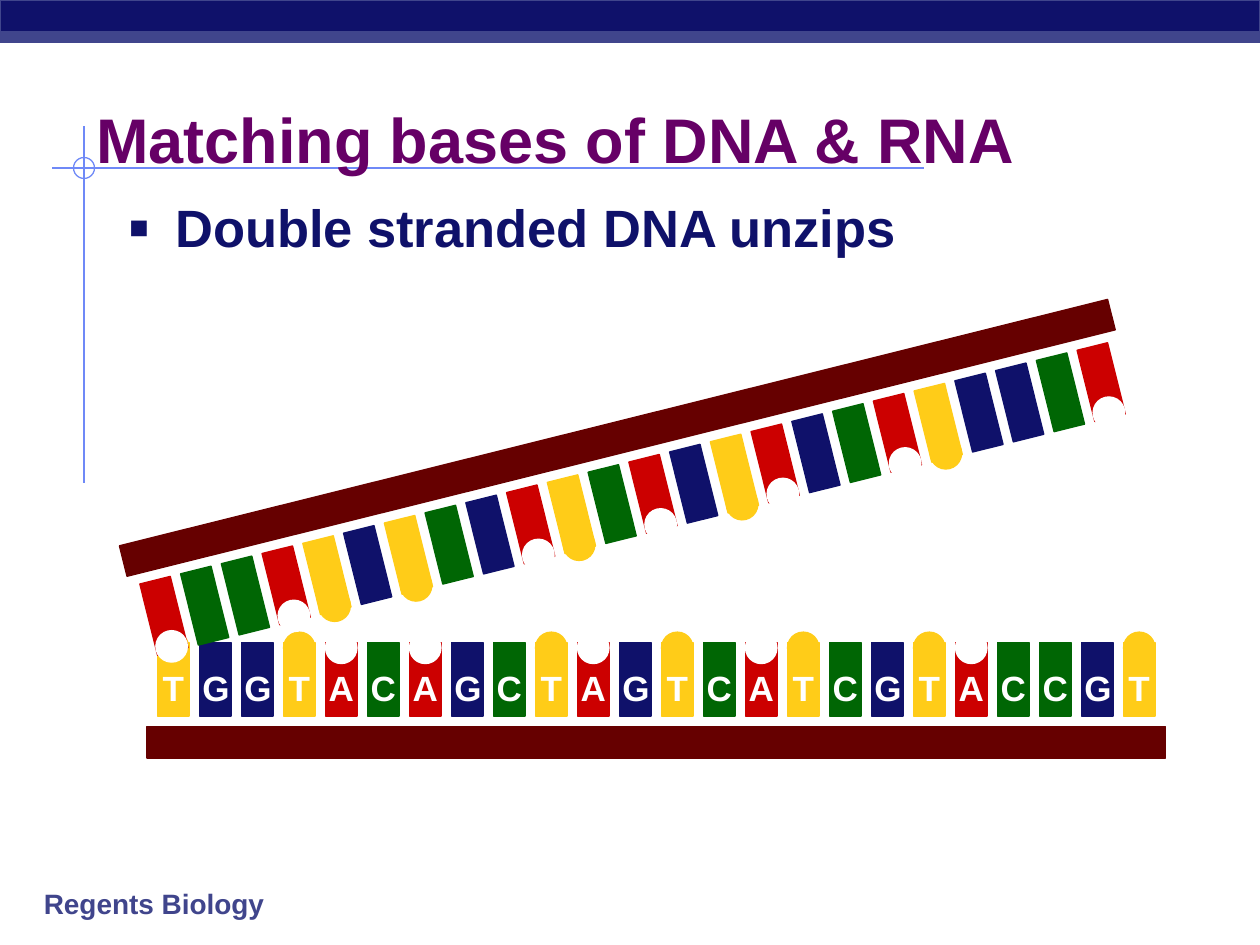
import math

import lxml.etree
import pptx
import pptx.dml.color
import pptx.enum.shapes
import pptx.enum.text
import pptx.oxml.ns
import pptx.util

PX = 7620
NAVY, SLATE, SKY, PLUM = "0F116A", "40458C", "6F89F7", "660066"
MAROON, WHITE = "660000", "FFFFFF"
BASE_COLORS = {"A": "CC0000", "T": "FFCC18", "C": "006604", "G": NAVY}
KNOB_COLORS = {"A": WHITE, "T": BASE_COLORS["T"]}
PAIRS = {"A": "T", "T": "A", "C": "G", "G": "C"}
SEQUENCE = "TGGTACAGCTAGTCATCGTACCGT"
PITCH, BASE_W, BASE_H = 40, 30, 70
RECT = pptx.enum.shapes.MSO_SHAPE.RECTANGLE
OVAL = pptx.enum.shapes.MSO_SHAPE.OVAL
ANCHOR = pptx.enum.text.MSO_ANCHOR
ALIGN = pptx.enum.text.PP_ALIGN


def emu(*lengths):
    """Turn px lengths into EMU."""
    return [pptx.util.Emu(round(length * PX)) for length in lengths]


def paint(color_format, color):
    """Set a colour from a hex string."""
    color_format.rgb = pptx.dml.color.RGBColor.from_string(color)


def set_all(target, values):
    """Set each attribute named in a dict of format values."""
    for key, value in values.items():
        setattr(target, key, value)


def add_form(shapes, kind, box, fill, line, angle=0):
    """Add a preset shape in a box, without fill if none is given."""
    form = shapes.add_shape(kind, *emu(*box))
    form.shadow.inherit = False
    form.rotation = angle
    if fill:
        form.fill.solid()
        paint(form.fill.fore_color, fill)
    else:
        form.fill.background()
    paint(form.line.color, line)
    form.line.width = pptx.util.Pt(0.75)
    return form


def add_words(slide, box, words, size, color, frame=None, paragraph=None):
    """Add one bold paragraph and return it."""
    text = slide.shapes.add_textbox(*emu(*box)).text_frame
    set_all(text, {"word_wrap": True, **(frame or {})})
    line = text.paragraphs[0]
    set_all(line, paragraph or {})
    run = line.add_run()
    run.text = words
    set_all(run.font, {"name": "Arial", "size": pptx.util.Pt(size), "bold": True})
    paint(run.font.color, color)
    return line


def add_rule(slide, *ends):
    """Add a thin straight line between two points."""
    rule = slide.shapes.add_connector(pptx.enum.shapes.MSO_CONNECTOR.STRAIGHT, *emu(*ends))
    paint(rule.line.color, SKY)
    rule.line.width = pptx.util.Pt(1)
    lxml.etree.SubElement(rule._element.spPr, pptx.oxml.ns.qn("a:effectLst"))


def add_crosshair(slide, box):
    """Draw the two title rules and the ring where they cross."""
    left, top, width, height = box
    across, down = left + 30, top + 40
    add_rule(slide, left, down, left + width, down)
    add_rule(slide, across, top, across, top + height)
    add_form(slide.shapes, OVAL, (across - 10, down - 10, 20, 20), None, SKY)


def add_banner(slide, box):
    """Draw the dark band with its lighter lower edge."""
    left, top, width, height = box
    add_form(slide.shapes, RECT, box, NAVY, SLATE)
    add_form(slide.shapes, RECT, (left, top + height - 10, width, 10), SLATE, SLATE)


def add_bullet_point(slide, box, words):
    """Add a body line with a square bullet."""
    point = add_words(slide, box, words, 30, NAVY, paragraph={"space_before": pptx.util.Pt(6)})
    props = point._p.get_or_add_pPr()
    indent = emu(45)[0]
    props.set("marL", str(indent))
    props.set("indent", str(-indent))
    qn = pptx.oxml.ns.qn
    bullet_color = lxml.etree.SubElement(props, qn("a:buClr"))
    lxml.etree.SubElement(bullet_color, qn("a:srgbClr"), val=NAVY)
    lxml.etree.SubElement(props, qn("a:buSzPct"), val="120000")
    lxml.etree.SubElement(props, qn("a:buFont"), typeface="Arial")
    lxml.etree.SubElement(props, qn("a:buChar"), char="▪")


def add_strand(slide, box, bases, side, angle=0, lettered=False):
    """Draw a backbone in a box with its bases above (-1) or below (1), turned about its middle."""
    left, top, width, height = box
    mid_x, mid_y = left + width / 2, top + height / 2
    cos, sin = math.cos(math.radians(angle)), math.sin(math.radians(angle))

    def centred(along, away, w, h):
        return (mid_x + along * cos - away * sin - w / 2,
                mid_y + along * sin + away * cos - h / 2, w, h)

    add_form(slide.shapes, RECT, box, MAROON, MAROON, angle)
    for index, base in enumerate(bases):
        along = (index - (len(bases) - 1) / 2) * PITCH
        color, knob = BASE_COLORS[base], KNOB_COLORS.get(base)
        shapes = slide.shapes.add_group_shape().shapes if knob else slide.shapes
        add_form(shapes, RECT, centred(along, side * 60, BASE_W, BASE_H), color, color, angle)
        if knob:
            add_form(shapes, OVAL, centred(along, side * 90, BASE_W, BASE_W), knob, knob, angle)
        if lettered:
            add_words(slide, centred(along, side * 52, 48, 52), base, 20, WHITE,
                      {"word_wrap": False, "vertical_anchor": ANCHOR.MIDDLE},
                      {"alignment": ALIGN.CENTER})


def main():
    """Build and save the slide."""
    deck = pptx.Presentation()
    deck.slide_width, deck.slide_height = emu(1200, 900)
    slide = deck.slides.add_slide(deck.slide_layouts[6])
    add_crosshair(slide, (50, 120, 830, 340))
    add_banner(slide, (0, 0, 1200, 40))
    add_words(slide, (30, 838, 240, 44), "Regents Biology", 16, SLATE,
              {"vertical_anchor": ANCHOR.MIDDLE})
    add_words(slide, (80, 90, 1020, 100), "Matching bases of DNA & RNA", 36, PLUM)
    add_bullet_point(slide, (110, 180, 1010, 280), "Double stranded DNA unzips")
    add_strand(slide, (140, 692, 970, 30), SEQUENCE, -1, lettered=True)
    partner = "".join(PAIRS[base] for base in SEQUENCE)
    add_strand(slide, (103, 402, 970, 30), partner, 1, angle=-14)
    deck.save("out.pptx")


if __name__ == "__main__":
    main()
